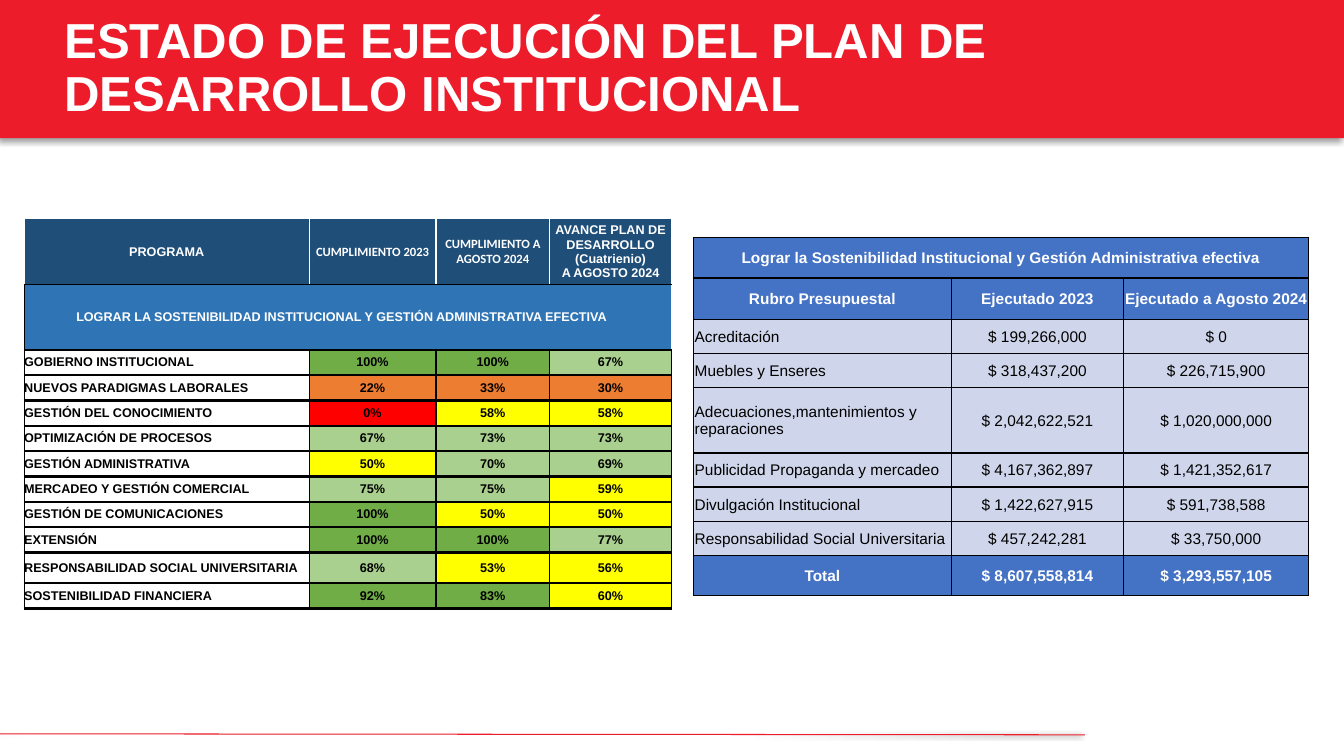
import dataclasses
import typing

import lxml.etree
import pptx
import pptx.dml.color
import pptx.enum.shapes
import pptx.enum.text
import pptx.oxml
import pptx.oxml.ns
import pptx.util

Inches = pptx.util.Inches
Pt = pptx.util.Pt
ALIGN = pptx.enum.text.PP_ALIGN
MIDDLE = pptx.enum.text.MSO_ANCHOR.MIDDLE


@dataclasses.dataclass(frozen=True)
class Theme:
    red: str = "EC1C2A"
    white: str = "FFFFFF"
    black: str = "000000"
    navy: str = "1F4E78"
    blue: str = "2F75B5"
    budget_blue: str = "4472C4"
    budget_pale: str = "CFD5EA"
    font: str = "Arial"
    header_font: str = "Calibri"
    title_size: float = 35.1
    program_size: float = 9
    budget_size: float = 11


class Box(typing.NamedTuple):
    left: float
    top: float
    width: float
    height: float


THEME = Theme()
LEVELS = [(80, "70AD47"), (61, "A9D08E"), (40, "FFFF00"), (20, "ED7D31"), (0, "FF0000")]

PROGRAM_HEADERS = [
    "PROGRAMA", "CUMPLIMIENTO 2023", "CUMPLIMIENTO A AGOSTO 2024",
    "AVANCE PLAN DE DESARROLLO (Cuatrienio)\vA AGOSTO 2024",
]
PROGRAM_GOAL = "LOGRAR LA SOSTENIBILIDAD INSTITUCIONAL Y GESTIÓN ADMINISTRATIVA EFECTIVA"
PROGRAMS = [
    ("GOBIERNO INSTITUCIONAL", 100, 100, 67),
    ("NUEVOS PARADIGMAS LABORALES", 22, 33, 30),
    ("GESTIÓN DEL CONOCIMIENTO", 0, 58, 58),
    ("OPTIMIZACIÓN DE PROCESOS", 67, 73, 73),
    ("GESTIÓN ADMINISTRATIVA", 50, 70, 69),
    ("MERCADEO Y GESTIÓN COMERCIAL", 75, 75, 59),
    ("GESTIÓN DE COMUNICACIONES", 100, 50, 50),
    ("EXTENSIÓN", 100, 100, 77),
    ("RESPONSABILIDAD SOCIAL UNIVERSITARIA", 68, 53, 56),
    ("SOSTENIBILIDAD FINANCIERA", 92, 83, 60),
]
BUDGET_GOAL = "Lograr la Sostenibilidad Institucional y Gestión Administrativa efectiva"
BUDGET_HEADERS = ["Rubro Presupuestal", "Ejecutado 2023", "Ejecutado a Agosto 2024"]
BUDGET = [
    ("Acreditación", 199266000, 0),
    ("Muebles y Enseres", 318437200, 226715900),
    ("Adecuaciones,mantenimientos y reparaciones", 2042622521, 1020000000),
    ("Publicidad Propaganda y mercadeo", 4167362897, 1421352617),
    ("Divulgación Institucional", 1422627915, 591738588),
    ("Responsabilidad Social Universitaria", 457242281, 33750000),
]
BUDGET_TOTAL = ("Total", 8607558814, 3293557105)


def rgb(color):
    return pptx.dml.color.RGBColor.from_string(color)


def set_attributes(target, values):
    for name, value in values.items():
        setattr(target, name, value)


def format_runs(paragraph, size, color, font=THEME.font, bold=True):
    for line_break in paragraph._p.findall(pptx.oxml.ns.qn("a:br")):
        properties = lxml.etree.SubElement(line_break, pptx.oxml.ns.qn("a:rPr"))
        properties.set("sz", str(int(size * 100)))
    for run in paragraph.runs:
        set_attributes(run.font, {"name": font, "size": Pt(size), "bold": bold})
        run.font.color.rgb = rgb(color)


def add_shadow(shape, direction):
    shape._element.spPr.append(pptx.oxml.parse_xml(
        f'<a:effectLst {pptx.oxml.ns.nsdecls("a")}>'
        f'<a:outerShdw blurRad="{Pt(4)}" dist="{Pt(3)}" dir="{direction * 60000}" rotWithShape="0">'
        f'<a:srgbClr val="{THEME.black}"><a:alpha val="40000"/></a:srgbClr>'
        "</a:outerShdw></a:effectLst>"))


def set_borders(cell, borders):
    properties = cell._tc.get_or_add_tcPr()
    for side in "LRTB":
        if side in borders:
            color, width = borders[side]
            properties.append(pptx.oxml.parse_xml(
                f'<a:ln{side} {pptx.oxml.ns.nsdecls("a")} w="{Pt(width)}">'
                f'<a:solidFill><a:srgbClr val="{color}"/></a:solidFill></a:ln{side}>'))


def fill_cell(cell, text, size, color, fill, borders, inset, centered=True, **run_format):
    set_attributes(cell, {
        "margin_left": Inches(inset), "margin_top": Inches(inset),
        "margin_right": Inches(inset), "margin_bottom": 0, "vertical_anchor": MIDDLE})
    set_borders(cell, borders)
    if fill:
        cell.fill.solid()
        cell.fill.fore_color.rgb = rgb(fill)
    else:
        cell.fill.background()
    paragraph = cell.text_frame.paragraphs[0]
    paragraph.text = text
    paragraph.alignment = ALIGN.CENTER if centered else ALIGN.LEFT
    format_runs(paragraph, size, color, **run_format)


def add_grid(slide, box, widths, heights):
    table = slide.shapes.add_table(len(heights), len(widths), *map(Inches, box)).table
    set_attributes(table, {"first_row": False, "horz_banding": False})
    for column, width in zip(table.columns, widths):
        column.width = Inches(box.width * width / sum(widths))
    for row, height in zip(table.rows, heights):
        row.height = Inches(box.height * height / sum(heights))
    return table


def add_program_table(slide, box):
    heights = [0.65, 0.64] + [0.25] * 8 + [0.3, 0.25]
    table = add_grid(slide, box, [2.83, 1.26, 1.13, 1.21], heights)
    size = THEME.program_size
    white, thin, thick = (THEME.white, 1), (THEME.black, 1), (THEME.black, 2)
    header_borders = {"L": white, "R": white, "T": white, "B": thin}
    goal_borders = {"L": thin, "T": thin, "B": thick}
    body_borders = {"L": thin, "R": thin, "T": thick, "B": thick}
    for column, text in enumerate(PROGRAM_HEADERS):
        font = THEME.header_font if column in (1, 2) else THEME.font
        fill_cell(table.cell(0, column), text, size, THEME.white, THEME.navy,
                  header_borders, 0, font=font)
        fill_cell(table.cell(1, column), "" if column else PROGRAM_GOAL, size,
                  THEME.white, THEME.blue, goal_borders, 0)
    table.cell(1, 0).merge(table.cell(1, 3))
    table.cell(1, 0).margin_right = Inches(0.13)
    for row, (program, *scores) in enumerate(PROGRAMS, 2):
        fill_cell(table.cell(row, 0), program, size, THEME.black, None,
                  body_borders, 0, centered=False)
        for column, score in enumerate(scores, 1):
            fill = next(color for minimum, color in LEVELS if score >= minimum)
            fill_cell(table.cell(row, column), f"{score}%", size, THEME.black, fill,
                      body_borders, 0)


def add_budget_table(slide, box):
    heights = [0.4, 0.41, 0.34, 0.34, 0.65, 0.34, 0.34, 0.34, 0.4]
    table = add_grid(slide, box, [2.55, 1.71, 1.83], heights)
    borders = dict.fromkeys("LRTB", (THEME.black, 1))
    amounts = [(name, *(f"$ {value:,}" for value in values))
               for name, *values in BUDGET + [BUDGET_TOTAL]]
    rows = [(BUDGET_GOAL, "", ""), BUDGET_HEADERS] + amounts
    for row, texts in enumerate(rows):
        strong = row < 2 or row == len(rows) - 1
        color = THEME.white if strong else THEME.black
        fill = THEME.budget_blue if strong else THEME.budget_pale
        for column, text in enumerate(texts):
            fill_cell(table.cell(row, column), text, THEME.budget_size, color, fill, borders,
                      0.01, centered=strong or column > 0, bold=strong)
    table.cell(0, 0).merge(table.cell(0, 2))


def add_title_band(slide, box):
    band = slide.shapes.add_shape(pptx.enum.shapes.MSO_SHAPE.RECTANGLE, *map(Inches, box))
    band.fill.solid()
    band.fill.fore_color.rgb = rgb(THEME.red)
    band.line.fill.background()
    add_shadow(band, 135)
    frame = band.text_frame
    set_attributes(frame, {"word_wrap": True, "vertical_anchor": MIDDLE,
                           "margin_left": Inches(0.64)})
    frame.text = "ESTADO DE EJECUCIÓN DEL PLAN DE\nDESARROLLO INSTITUCIONAL"
    for paragraph in frame.paragraphs:
        set_attributes(paragraph, {"alignment": ALIGN.LEFT, "line_spacing": 0.9})
        format_runs(paragraph, THEME.title_size, THEME.white)


def add_footer_line(slide, box):
    line = slide.shapes.add_connector(
        pptx.enum.shapes.MSO_CONNECTOR.STRAIGHT, Inches(box.left), Inches(box.top),
        Inches(box.left + box.width), Inches(box.top + box.height))
    line.line.color.rgb = rgb(THEME.red)
    line.line.width = Pt(0.75)
    add_shadow(line, 180)


def main():
    presentation = pptx.Presentation()
    set_attributes(presentation, {"slide_width": Inches(13.33), "slide_height": Inches(7.5)})
    slide = presentation.slides.add_slide(presentation.slide_layouts[6])
    add_footer_line(slide, Box(0, 7.28, 10.76, 0.01))
    add_program_table(slide, Box(0.24, 2.17, 6.42, 3.87))
    add_budget_table(slide, Box(6.88, 2.36, 6.1, 3.55))
    add_title_band(slide, Box(0, 0, 13.33, 1.37))
    presentation.save("out.pptx")


if __name__ == "__main__":
    main()
